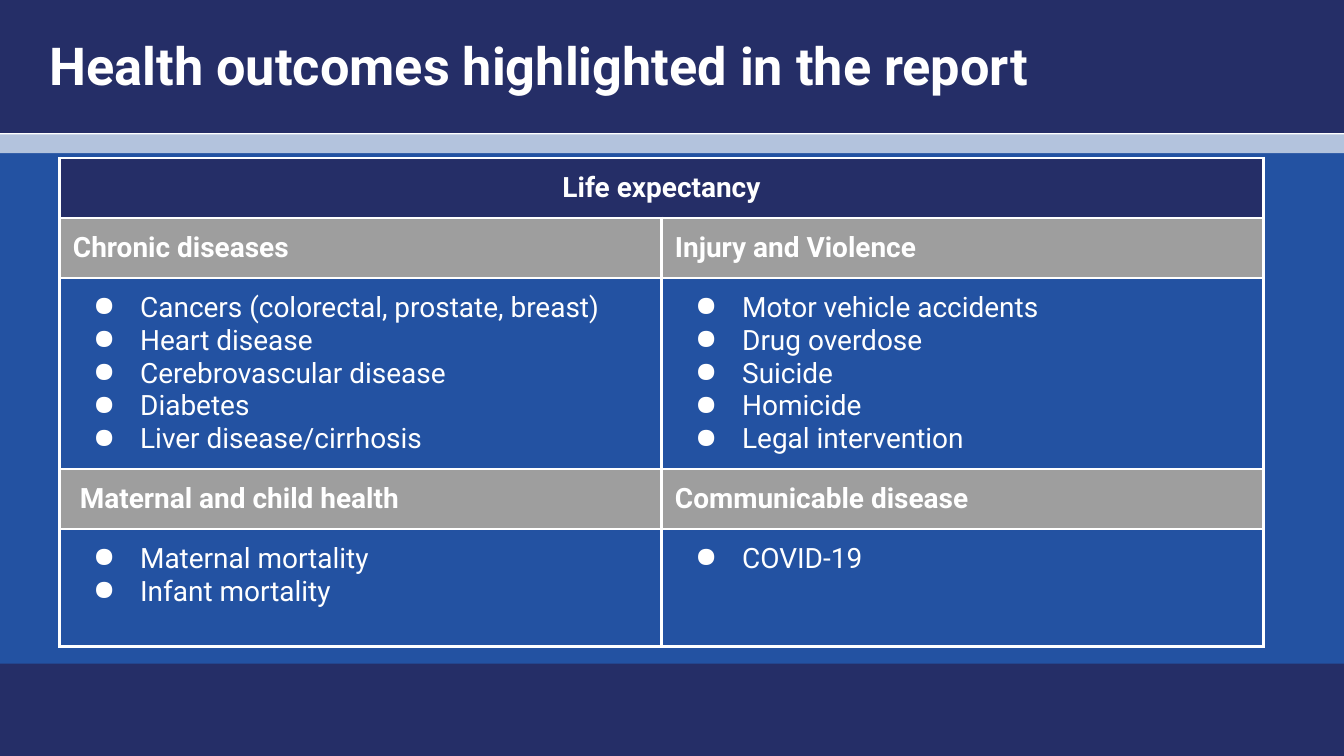
from dataclasses import dataclass

from lxml import etree
from pptx import Presentation
from pptx.dml.color import RGBColor
from pptx.enum import shapes, text
from pptx.oxml import ns
from pptx.util import Pt


@dataclass(frozen=True)
class Theme:
    font: str = "Roboto"
    navy: str = "252E67"
    blue: str = "2352A2"
    pale: str = "B3C3DD"
    gray: str = "9E9E9E"
    white: str = "FFFFFF"
    title_size: float = 28
    table_size: float = 15
    border: float = 1.5
    inset: float = 7.2


class SlideBuilder:
    def __init__(self, s, theme):
        self.s = s
        self.theme = theme

    def style(self, p, size, bold):
        for r in p.runs:
            r.font.name = self.theme.font
            r.font.size = Pt(size)
            r.font.bold = bold
            r.font.color.rgb = RGBColor.from_string(self.theme.white)

    def inset(self, box):
        box.margin_left = box.margin_right = Pt(self.theme.inset)
        box.margin_top = box.margin_bottom = Pt(self.theme.inset)

    def band(self, top, height, color):
        """Full-width background stripe."""
        sp = self.s.shapes.add_shape(
            shapes.MSO_SHAPE.RECTANGLE, 0, Pt(top), Pt(720), Pt(height))
        sp.shadow.inherit = False
        sp.fill.solid()
        sp.fill.fore_color.rgb = RGBColor.from_string(color)
        sp.line.fill.background()

    def title(self, left, top, width, height, content):
        sp = self.s.shapes.title
        sp.left, sp.top, sp.width, sp.height = map(Pt, (left, top, width, height))
        tf = sp.text_frame
        tf.text = content
        tf.word_wrap = True
        tf.auto_size = text.MSO_AUTO_SIZE.NONE
        tf.vertical_anchor = text.MSO_ANCHOR.TOP
        self.inset(tf)
        p = tf.paragraphs[0]
        p.alignment = text.PP_ALIGN.LEFT
        self.style(p, self.theme.title_size, True)
        # Bring the title in front of the bands
        self.s.shapes._spTree.append(sp._element)

    def bullet(self, p):
        pPr = p._p.get_or_add_pPr()
        pPr.set("marL", str(Pt(36)))
        pPr.set("indent", str(-Pt(25.2)))
        color = etree.SubElement(pPr, ns.qn("a:buClr"))
        etree.SubElement(color, ns.qn("a:srgbClr"), val=self.theme.white)
        etree.SubElement(pPr, ns.qn("a:buChar"), char="●")

    def borders(self, cell):
        tcPr = cell._tc.get_or_add_tcPr()
        for side in ("a:lnL", "a:lnR", "a:lnT", "a:lnB"):
            ln = etree.SubElement(tcPr, ns.qn(side), w=str(Pt(self.theme.border)))
            fill = etree.SubElement(ln, ns.qn("a:solidFill"))
            etree.SubElement(fill, ns.qn("a:srgbClr"), val=self.theme.white)

    def cell(self, cell, content, color):
        """A string makes a heading cell, a list makes a bulleted cell."""
        is_list = isinstance(content, list)
        self.borders(cell)
        self.inset(cell)
        cell.fill.solid()
        cell.fill.fore_color.rgb = RGBColor.from_string(color)
        cell.text = "\n".join(content) if is_list else content
        for p in cell.text_frame.paragraphs:
            if is_list:
                self.bullet(p)
            self.style(p, self.theme.table_size, not is_list)

    def table(self, left, top, width, heights, rows, colors):
        columns = len(rows[0])
        frame = self.s.shapes.add_table(
            len(rows), columns, Pt(left), Pt(top), Pt(width), Pt(sum(heights)))
        table = frame.table
        table.first_row = table.horz_banding = False
        for column in table.columns:
            column.width = Pt(width / columns)
        for i, (height, row, color) in enumerate(zip(heights, rows, colors)):
            table.rows[i].height = Pt(height)
            for j, content in enumerate(row):
                self.cell(table.cell(i, j), content, color)
        # The first row is one centred heading
        heading = table.cell(0, 0)
        heading.merge(table.cell(0, columns - 1))
        heading.text_frame.paragraphs[0].alignment = text.PP_ALIGN.CENTER


def main():
    prs = Presentation()
    prs.slide_width, prs.slide_height = Pt(720), Pt(405)
    theme = Theme()
    slide = SlideBuilder(prs.slides.add_slide(prs.slide_layouts[5]), theme)

    # Background bands
    slide.band(75.6, 286.6, theme.blue)
    slide.band(355.5, 49.5, theme.navy)
    slide.band(-0.72, 72, theme.navy)
    slide.band(72, 10, theme.pale)

    # Title
    slide.title(19.4, 10.8, 671, 45.4, "Health outcomes highlighted in the report")

    # Outcomes by group
    rows = [
        ["Life expectancy", ""],
        ["Chronic diseases", "Injury and Violence"],
        [["Cancers (colorectal, prostate, breast)", "Heart disease",
          "Cerebrovascular disease", "Diabetes", "Liver disease/cirrhosis"],
         ["Motor vehicle accidents", "Drug overdose", "Suicide", "Homicide",
          "Legal intervention"]],
        [" Maternal and child health", "Communicable disease"],
        [["Maternal mortality", "Infant mortality"], ["COVID-19"]],
    ]
    colors = [theme.navy, theme.gray, theme.blue, theme.gray, theme.blue]
    slide.table(31.9, 84.7, 645, [30.2, 30.2, 96.5, 30.2, 63], rows, colors)

    prs.save("out.pptx")


if __name__ == "__main__":
    main()
